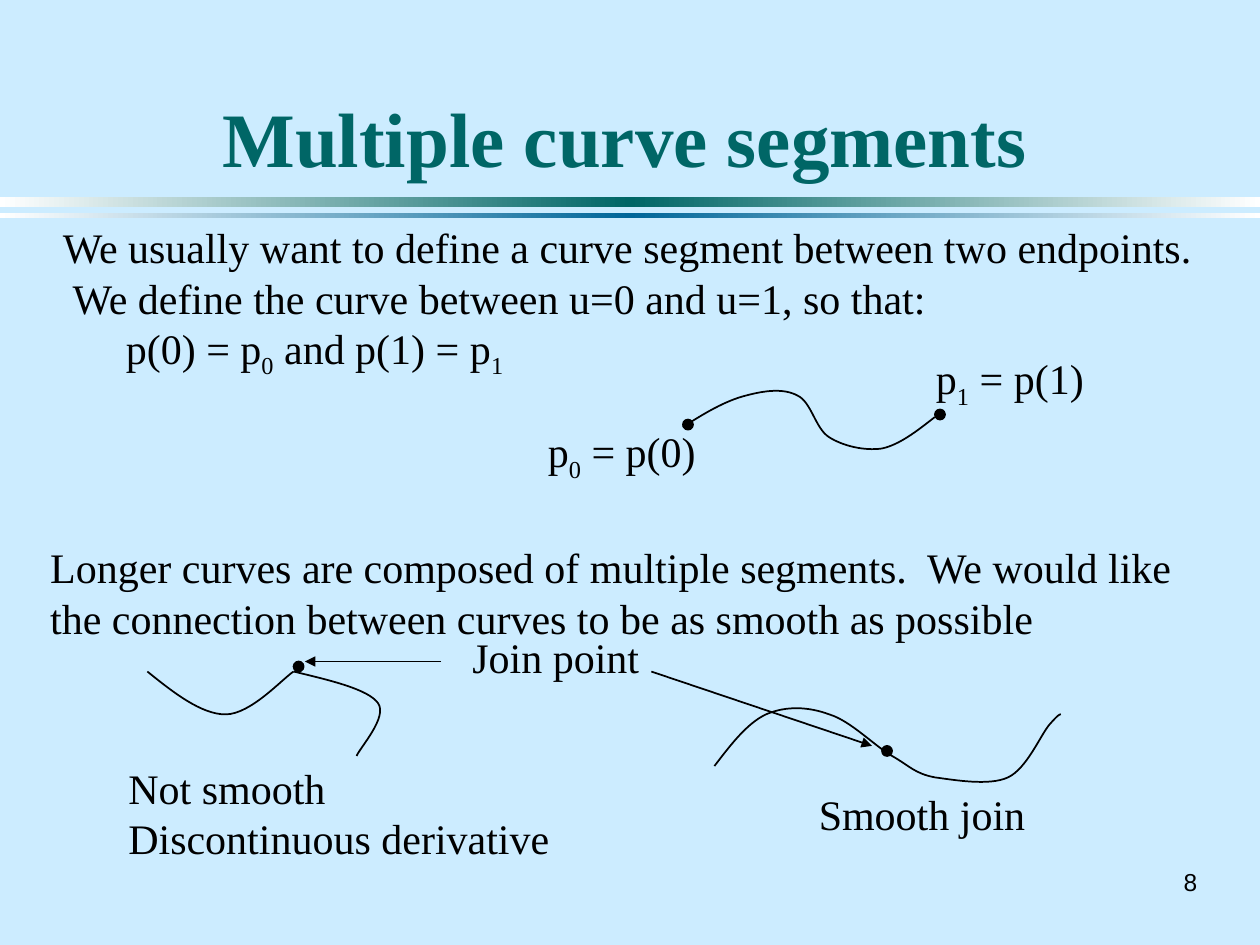
from copy import deepcopy
from dataclasses import dataclass

from pptx import Presentation
from pptx.dml.color import RGBColor
from pptx.enum.shapes import MSO_CONNECTOR as Connector, MSO_SHAPE as Preset
from pptx.enum.text import MSO_ANCHOR as Anchor, PP_ALIGN as Align
from pptx.oxml import parse_xml
from pptx.oxml.ns import nsdecls, qn
from pptx.oxml.xmlchemy import OxmlElement
from pptx.util import Inches, Pt


@dataclass(frozen=True)
class Theme:
    background: str = "CCECFF"
    ink: str = "000000"
    title: str = "006666"
    accent: str = "006699"
    edge: str = "FFFFFF"
    font: str = "Times New Roman"
    number_font: str = "Arial"
    title_size: int = 44
    body_size: int = 24
    number_size: int = 14
    line_width: float = 1
    dot_size: float = 0.08


def color(value):
    return RGBColor.from_string(value)


def write_runs(paragraph, text, *, font, size, ink, bold=False, align=Align.LEFT):
    paragraph.alignment = align
    for index, part in enumerate(text.split("_")):
        pieces = [(part, False)] if index == 0 else [(part[:1], True), (part[1:], False)]
        for content, subscript in pieces:
            if not content:
                continue
            run = paragraph.add_run()
            run.text = content
            run.font.name = font
            run.font.size = Pt(size)
            run.font.bold = bold
            run.font.color.rgb = color(ink)
            if subscript:
                run.font._element.set("baseline", "-25000")


class SlideBuilder:
    def __init__(self, slide, theme):
        self.slide = slide
        self.shapes = slide.shapes
        self.theme = theme
        slide.background.fill.solid()
        slide.background.fill.fore_color.rgb = color(theme.background)

    def outline(self, line):
        line.color.rgb = color(self.theme.ink)
        line.width = Pt(self.theme.line_width)

    def text(self, left, top, width, height, *lines, wrap=False,
             anchor=Anchor.TOP, **changes):
        box = self.shapes.add_textbox(*map(Inches, (left, top, width, height)))
        frame = box.text_frame
        frame.word_wrap = wrap
        frame.vertical_anchor = anchor
        style = dict(font=self.theme.font, size=self.theme.body_size, ink=self.theme.ink)
        style.update(changes)
        for index, line in enumerate(lines):
            paragraph = frame.add_paragraph() if index else frame.paragraphs[0]
            write_runs(paragraph, line, **style)

    def band(self, top, height, middle):
        shape = self.shapes.add_shape(Preset.RECTANGLE, 0, Inches(top),
                                      Inches(10), Inches(height))
        shape.shadow.inherit = False
        shape.line.fill.background()
        shape.fill.gradient()
        shape.fill.gradient_angle = 0
        for stop in shape.fill.gradient_stops:
            stop.color.rgb = color(self.theme.edge)
        first = shape._element.spPr.find(".//" + qn("a:gs"))
        first.addnext(deepcopy(first))
        center = shape.fill.gradient_stops[1]
        center.position = 0.5
        center.color.rgb = color(middle)

    def dot(self, left, top):
        size = Inches(self.theme.dot_size)
        shape = self.shapes.add_shape(Preset.OVAL, Inches(left), Inches(top), size, size)
        shape.shadow.inherit = False
        shape.fill.solid()
        shape.fill.fore_color.rgb = color(self.theme.ink)
        self.outline(shape.line)

    def curve(self, start, *points):
        builder = self.shapes.build_freeform(*map(Inches, start))
        builder.add_line_segments([tuple(map(Inches, point)) for point in points],
                                  close=False)
        shape = builder.convert_to_shape()
        shape.shadow.inherit = False
        shape.fill.background()
        self.outline(shape.line)
        segments = list(shape._element.iter(qn("a:lnTo")))
        for index in range(0, len(segments), 3):
            bezier = OxmlElement("a:cubicBezTo")
            segments[index].addprevious(bezier)
            for segment in segments[index:index + 3]:
                bezier.append(segment[0])
                segment.getparent().remove(segment)

    def arrow(self, start, end):
        connector = self.shapes.add_connector(Connector.STRAIGHT,
                                              *map(Inches, start + end))
        self.outline(connector.line)
        connector.line._get_or_add_ln().append(
            parse_xml(f'<a:tailEnd {nsdecls("a")} type="triangle"/>'))
        connector._element.spPr.append(OxmlElement("a:effectLst"))


def main():
    theme = Theme()
    presentation = Presentation()
    presentation.slide_width, presentation.slide_height = Inches(10), Inches(7.5)
    slide = presentation.slides.add_slide(presentation.slide_layouts[6])
    page = SlideBuilder(slide, theme)

    page.band(1.56, 0.08, theme.title)
    page.band(1.69, 0.04, theme.accent)
    page.text(9.17, 6.83, 0.43, 0.33, "8", anchor=Anchor.MIDDLE, align=Align.RIGHT,
              font=theme.number_font, size=theme.number_size)
    page.text(0.67, 0.25, 8.58, 1.25, "Multiple curve segments", wrap=True,
              anchor=Anchor.BOTTOM, align=Align.CENTER, size=theme.title_size,
              ink=theme.title, bold=True)

    page.text(0.4, 1.71, 9.18, 1.3,
              "We usually want to define a curve segment between two endpoints.  "
              "We define the curve between u=0 and u=1, so that:",
              "\tp(0) = p_0 and p(1) = p_1", wrap=True)
    page.curve((5.42, 3.39), (5.59, 3.28), (5.76, 3.18), (5.92, 3.14),
               (6.07, 3.1), (6.22, 3.08), (6.33, 3.14),
               (6.44, 3.19), (6.47, 3.4), (6.58, 3.47),
               (6.69, 3.54), (6.86, 3.58), (7, 3.56),
               (7.14, 3.53), (7.28, 3.42), (7.42, 3.31))
    page.dot(7.42, 3.25)
    page.text(7.33, 2.75, 1.39, 0.5, "p_1 = p(1)")
    page.dot(5.42, 3.33)
    page.text(4.25, 3.33, 1.39, 0.5, "p_0 = p(0)")

    page.text(0.3, 4.25, 9.45, 0.9,
              "Longer curves are composed of multiple segments.  We would like "
              "the connection between curves to be as smooth as possible", wrap=True)
    page.curve((1.17, 5.33), (1.38, 5.5), (1.6, 5.67), (1.79, 5.67),
               (1.99, 5.67), (2.24, 5.39), (2.33, 5.33))
    page.curve((2.33, 5.33), (2.62, 5.4), (2.92, 5.47), (3, 5.58),
               (3.08, 5.69), (2.86, 5.93), (2.83, 6))
    page.dot(2.33, 5.25)
    page.arrow((3.5, 5.25), (2.42, 5.25))
    page.text(3.65, 4.96, 1.53, 0.5, "Join point")
    page.text(0.92, 6, 3.54, 0.9, "Not smooth", "Discontinuous derivative")

    page.curve((5.67, 6.08), (5.8, 5.91), (5.93, 5.74), (6.08, 5.67),
               (6.24, 5.6), (6.42, 5.61), (6.58, 5.67),
               (6.75, 5.72), (6.94, 5.92), (7.08, 6),
               (7.22, 6.08), (7.26, 6.14), (7.42, 6.17),
               (7.57, 6.19), (7.85, 6.24), (8, 6.17),
               (8.15, 6.1), (8.26, 5.83), (8.33, 5.75),
               (8.4, 5.67), (8.41, 5.67), (8.42, 5.67))
    page.dot(7, 5.92)
    page.text(6.4, 6.21, 1.84, 0.5, "Smooth join")
    page.arrow((5.17, 5.33), (6.92, 5.92))

    presentation.save("out.pptx")


if __name__ == "__main__":
    main()
